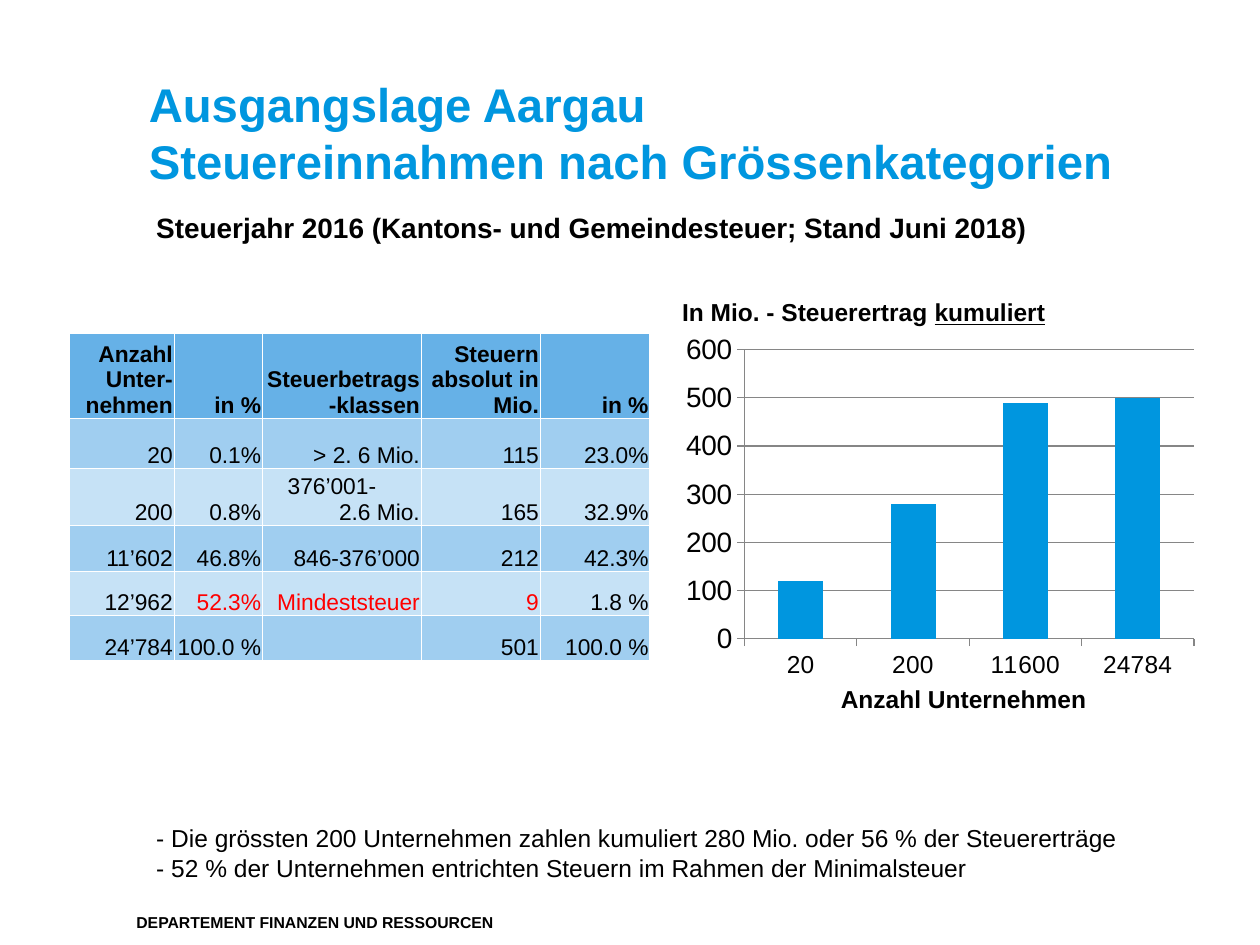
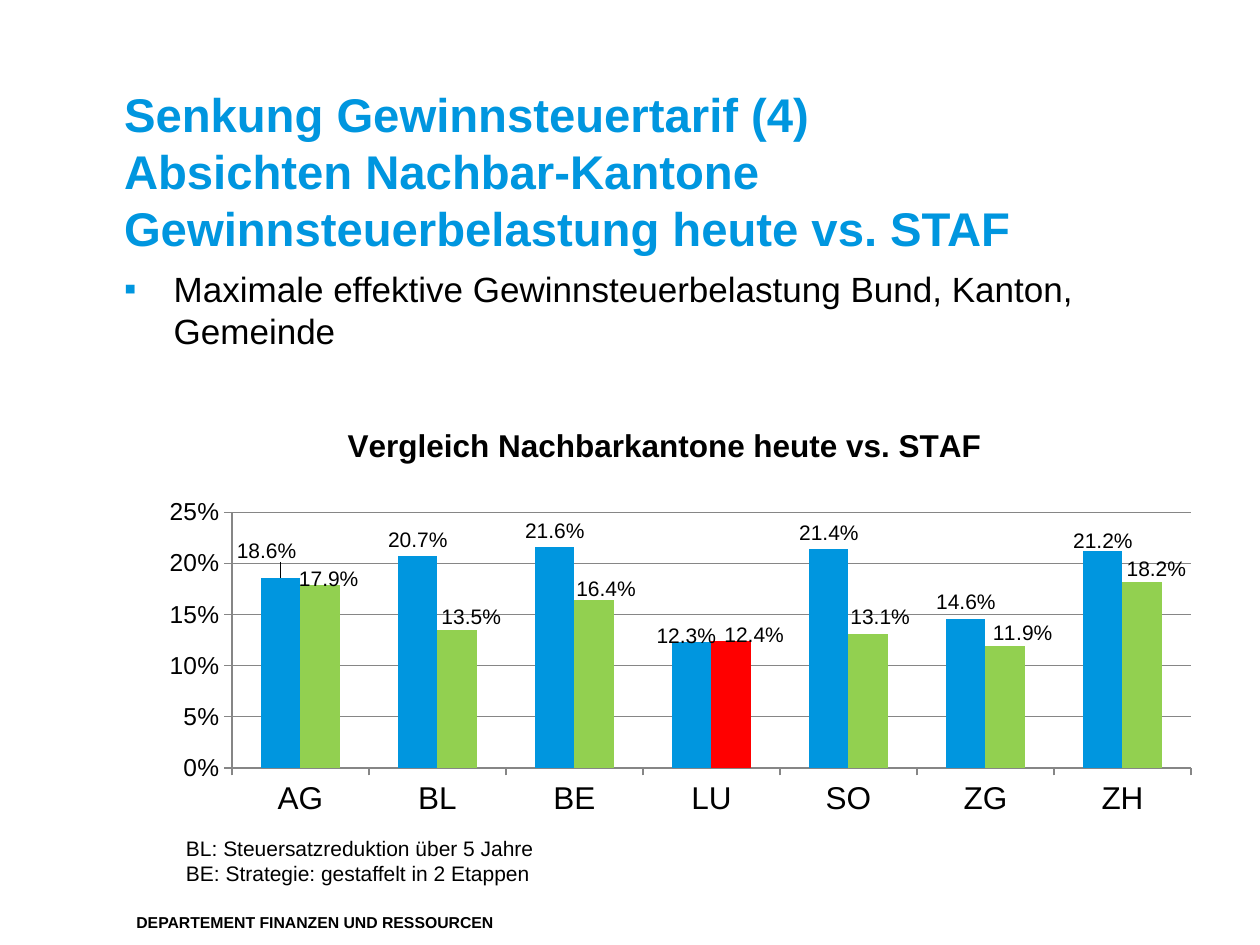
from dataclasses import dataclass

from pptx import Presentation
from pptx.chart.data import CategoryChartData
from pptx.dml.color import RGBColor as RGB
from pptx.enum.chart import XL_CHART_TYPE as CT, XL_LABEL_POSITION as LP, XL_TICK_MARK as TM
from pptx.enum.text import MSO_ANCHOR as MA, MSO_AUTO_SIZE as AS, PP_ALIGN as PA
from pptx.oxml import parse_xml
from pptx.oxml.ns import nsdecls, qn
from pptx.util import Cm, Pt


@dataclass(frozen=True)
class Theme:
    font: str = "Arial"
    blue: str = "0096DF"
    green: str = "92D050"
    red: str = "FF0000"
    black: str = "000000"
    white: str = "FFFFFF"
    gray: str = "868686"
    head_fill: str = "66B1E7"
    bands: tuple = ("A0CEF0", "C6E2F6")
    title: int = 27
    body: int = 20
    chart_title: int = 18
    subtitle: int = 16
    text: int = 14
    cell: int = 13
    note: int = 12
    footer: int = 9


T = Theme()

FOOTER = "DEPARTEMENT FINANZEN UND RESSOURCEN"

REVENUE = {
    "title": "Ausgangslage Aargau\nSteuereinnahmen nach Grössenkategorien",
    "subtitle": "Steuerjahr 2016 (Kantons- und Gemeindesteuer; Stand Juni 2018)",
    "chart_title": "In Mio. - Steuerertrag ",
    "chart_title_underlined": "kumuliert",
    "axis_title": "Anzahl Unternehmen",
    "findings": [
        "- Die grössten 200 Unternehmen zahlen kumuliert 280 Mio. oder 56 % der Steuererträge",
        "- 52 % der Unternehmen entrichten Steuern im Rahmen der Minimalsteuer",
    ],
    "table": [
        ("Anzahl Unter-nehmen", "in %", "Steuerbetrags-klassen", "Steuern absolut in Mio.", "in %"),
        ("20", "0.1%", "> 2. 6 Mio.", "115", "23.0%"),
        ("200", "0.8%", "376’001-\n2.6 Mio.", "165", "32.9%"),
        ("11’602", "46.8%", "846-376’000", "212", "42.3%"),
        ("12’962", "52.3%", "Mindeststeuer", "9", "1.8 %"),
        ("24’784", "100.0 %", "", "501", "100.0 %"),
    ],
    "red_cells": {(4, 1), (4, 2), (4, 3)},
    "col_widths": (2.11, 1.78, 3.2, 2.4, 2.21),
    "row_heights": (1.7, 1.02, 1.12, 0.93, 0.9, 0.9),
    "cats": ["20", "200", "11600", "24784"],
    "series": [("Steuerertrag", T.blue, [120, 280, 490, 500])],
}

CANTONS = {
    "title": "Senkung Gewinnsteuertarif (4)\n"
             "Absichten Nachbar-Kantone Gewinnsteuerbelastung heute vs. STAF",
    "bullet": "Maximale effektive Gewinnsteuerbelastung Bund, Kanton, Gemeinde",
    "chart_title": "Vergleich Nachbarkantone heute vs. STAF",
    "notes": ["BL: Steuersatzreduktion über 5 Jahre", "BE: Strategie: gestaffelt in 2 Etappen"],
    "cats": ["AG", "BL", "BE", "LU", "SO", "ZG", "ZH"],
    "series": [
        ("heute", T.blue, [0.186, 0.207, 0.216, 0.123, 0.214, 0.146, 0.212]),
        ("STAF", T.green, [0.179, 0.135, 0.164, 0.124, 0.131, 0.119, 0.182]),
    ],
    "label_shifts": [
        {0: (-0.013, -0.022), 3: (-0.005, 0.022), 6: (0, 0.013)},
        {0: (0.008, 0.024), 1: (0.013, 0.007), 2: (0.011, 0.011), 3: (0.021, 0.022),
         4: (0.011, 0), 5: (0.016, 0.007), 6: (0.013, 0.007)},
    ],
    "red_point": (1, 3),
}


def style_font(f, size, bold=False, color=T.black):
    f.name, f.size, f.bold = T.font, Pt(size), bold
    f.color.rgb = RGB.from_string(color)


def write(tf, lines, size, bold=False, color=T.black, align=PA.LEFT, underlined=""):
    tf.word_wrap = True
    for i, line in enumerate(lines):
        p = tf.paragraphs[0] if i == 0 else tf.add_paragraph()
        p.text = line
        p.alignment = align
        if underlined:
            r = p.add_run()
            r.text = underlined
            r.font.underline = True
        for r in p.runs:
            style_font(r.font, size, bold, color)


def place(sp, box):
    sp.left, sp.top, sp.width, sp.height = (Cm(v) for v in box)


def add_text(s, box, lines, size, **fmt):
    sp = s.shapes.add_textbox(*(Cm(v) for v in box))
    write(sp.text_frame, lines, size, **fmt)
    return sp


def fill_placeholder(sp, box, lines, size, **fmt):
    place(sp, box)
    tf = sp.text_frame
    tf.margin_left = tf.margin_top = tf.margin_right = tf.margin_bottom = 0
    tf.vertical_anchor = MA.TOP
    tf.auto_size = AS.NONE
    write(tf, lines, size, **fmt)
    return tf


def set_title(s, box, text):
    fill_placeholder(s.shapes.title, box, [text], T.title, bold=True, color=T.blue)


def indent(p, left, first=0):
    pPr = p._p.get_or_add_pPr()
    pPr.set("marL", str(Cm(left)))
    pPr.set("indent", str(Cm(first)))
    return pPr


def add_bullet(p):
    pPr = indent(p, 1, -1)
    for xml in (f'<a:buClr {nsdecls("a")}><a:srgbClr val="{T.blue}"/></a:buClr>',
                f'<a:buFont {nsdecls("a")} typeface="{T.font}"/>',
                f'<a:buChar {nsdecls("a")} char="▪"/>'):
        pPr.append(parse_xml(xml))
    p.space_before = Pt(0)


def manual_layout(x, y, w=None, h=None, edge=True):
    inner = '<c:layoutTarget val="inner"/>' if w else ""
    modes = '<c:xMode val="edge"/><c:yMode val="edge"/>' if edge else ""
    size = f'<c:w val="{w}"/><c:h val="{h}"/>' if w else ""
    return parse_xml(f'<c:layout {nsdecls("c")}><c:manualLayout>{inner}{modes}'
                     f'<c:x val="{x}"/><c:y val="{y}"/>{size}</c:manualLayout></c:layout>')


def set_layout(el, index, layout):
    for old in el.findall(qn("c:layout")):
        el.remove(old)
    el.insert(index, layout)


def add_columns(s, box, content, plot_area, top, step, cat_size, val_size, fmt):
    data = CategoryChartData(number_format=fmt)
    data.categories = content["cats"]
    for name, _, vals in content["series"]:
        data.add_series(name, vals)
    ch = s.shapes.add_chart(CT.COLUMN_CLUSTERED, *(Cm(v) for v in box), data).chart
    ch.has_legend = ch.has_title = False
    style_font(ch.font, T.chart_title)
    set_layout(ch._chartSpace.chart.plotArea, 0, manual_layout(*plot_area))
    plot = ch.plots[0]
    plot.gap_width, plot.overlap, plot.vary_by_categories = 150, 0, False
    for ser, (_, color, _) in zip(plot.series, content["series"]):
        ser.format.fill.solid()
        ser.format.fill.fore_color.rgb = RGB.from_string(color)
        ser.invert_if_negative = False
    val = ch.value_axis
    val.minimum_scale, val.maximum_scale, val.major_unit = 0, top, step
    val.has_major_gridlines = True
    lines = [val.major_gridlines.format.line]
    for ax, size in ((ch.category_axis, cat_size), (val, val_size)):
        style_font(ax.tick_labels.font, size)
        ax.major_tick_mark, ax.minor_tick_mark = TM.OUTSIDE, TM.NONE
        lines.append(ax.format.line)
    for line in lines:
        line.color.rgb = RGB.from_string(T.gray)
        line.width = Pt(0.75)
    return ch


def hide_leader_lines(labels):
    labels._element.append(parse_xml(
        f'<c:extLst {nsdecls("c")}><c:ext uri="{{CE6537A1-D6FC-4f65-9D91-7224C49458BB}}" '
        'xmlns:c15="http://schemas.microsoft.com/office/drawing/2012/chart">'
        '<c15:showLeaderLines val="0"/></c:ext></c:extLst>'))


def label_series(ser, shifts):
    labels = ser.data_labels
    labels.show_value = True
    labels.number_format, labels.number_format_is_linked = "0.0%", False
    labels.position = LP.OUTSIDE_END
    style_font(labels.font, T.note)
    for i in shifts:
        label = ser.points[i].data_label
        style_font(label.font, T.note)
        label.position = LP.OUTSIDE_END
    for el in labels._element.findall(qn("c:dLbl")):
        i = int(el.find(qn("c:idx")).get("val"))
        set_layout(el, 1, manual_layout(*shifts[i], edge=False))
    hide_leader_lines(labels)


def format_cell(cell, text, fill, **fmt):
    cell.fill.solid()
    cell.fill.fore_color.rgb = RGB.from_string(fill)
    cell.margin_left = cell.margin_right = cell.margin_top = Cm(0.03)
    cell.margin_bottom = 0
    cell.vertical_anchor = MA.BOTTOM
    write(cell.text_frame, text.split("\n"), T.cell, align=PA.RIGHT, **fmt)
    for p in cell.text_frame.paragraphs[:-1]:
        p.alignment = PA.LEFT
        indent(p, 0.48)
    tcPr = cell._tc.get_or_add_tcPr()
    for i, side in enumerate("LRTB"):
        tcPr.insert(i, parse_xml(
            f'<a:ln{side} {nsdecls("a")} w="{Pt(0.5)}"><a:solidFill>'
            f'<a:srgbClr val="{T.white}"/></a:solidFill></a:ln{side}>'))


def add_revenue_table(s, left, top):
    rows, widths, heights = (REVENUE[k] for k in ("table", "col_widths", "row_heights"))
    tbl = s.shapes.add_table(len(rows), len(widths), Cm(left), Cm(top),
                             Cm(sum(widths)), Cm(sum(heights))).table
    for col, w in zip(tbl.columns, widths):
        col.width = Cm(w)
    for i, (row, h) in enumerate(zip(rows, heights)):
        tbl.rows[i].height = Cm(h)
        fill = T.bands[(i - 1) % 2] if i else T.head_fill
        for j, text in enumerate(row):
            color = T.red if (i, j) in REVENUE["red_cells"] else T.black
            format_cell(tbl.cell(i, j), text, fill, bold=i == 0, color=color)


def build_revenue(s):
    c = REVENUE
    set_title(s, (3, 1.52, 22.4, 1.7), c["title"])
    add_text(s, (2.9, 16.47, 20, 1.45), c["findings"], T.text)
    add_text(s, (2.9, 4.11, 21.8, 0.94), [c["subtitle"]], T.subtitle, bold=True)
    add_columns(s, (13.7, 6.53, 10.39, 7.19), c, (0.126, 0.072, 0.872, 0.811),
                600, 100, T.text, T.subtitle, "General")
    add_text(s, (13.5, 5.87, 10.8, 0.86), [c["chart_title"]], T.text, bold=True,
             underlined=c["chart_title_underlined"])
    add_text(s, (16.7, 13.67, 6, 0.86), [c["axis_title"]], T.text, bold=True)
    add_revenue_table(s, 1.4, 6.73)


def build_cantons(s):
    c = CANTONS
    set_title(s, (2.5, 1.72, 22.2, 1.7), c["title"])
    tf = fill_placeholder(s.placeholders[1], (2.5, 5.4, 22.6, 2.5), [c["bullet"]], T.body)
    add_bullet(tf.paragraphs[0])
    ch = add_columns(s, (2.3, 8.13, 22.2, 9.19), c, (0.107, 0.239, 0.871, 0.561),
                     0.25, 0.05, T.chart_title, T.text, "0.0%")
    ch.value_axis.tick_labels.number_format = "0%"
    ch.value_axis.tick_labels.number_format_is_linked = False
    write(ch.chart_title.text_frame, [c["chart_title"]], T.chart_title, bold=True,
          align=PA.CENTER)
    set_layout(ch.chart_title._element, 1, manual_layout(0.207, 0.035))
    ch.chart_title.include_in_layout = False
    series = ch.plots[0].series
    for ser, shifts in zip(series, c["label_shifts"]):
        label_series(ser, shifts)
    ser_no, point_no = c["red_point"]
    fill = series[ser_no].points[point_no].format.fill
    fill.solid()
    fill.fore_color.rgb = RGB.from_string(T.red)
    add_text(s, (3.5, 16.72, 20.2, 1.27), c["notes"], T.note)


def main():
    prs = Presentation()
    prs.slide_width, prs.slide_height = Cm(25.4), Cm(19.05)
    title_only, title_body = prs.slide_layouts[5], prs.slide_layouts[1]
    s = prs.slides.add_slide(title_only)
    footer = add_text(s, (2.5, 18.27, 16.2, 0.64), [FOOTER], T.footer, bold=True)
    prs.slide_master.shapes.element.append(footer.element)
    build_revenue(s)
    build_cantons(prs.slides.add_slide(title_body))
    prs.save("out.pptx")


if __name__ == "__main__":
    main()
